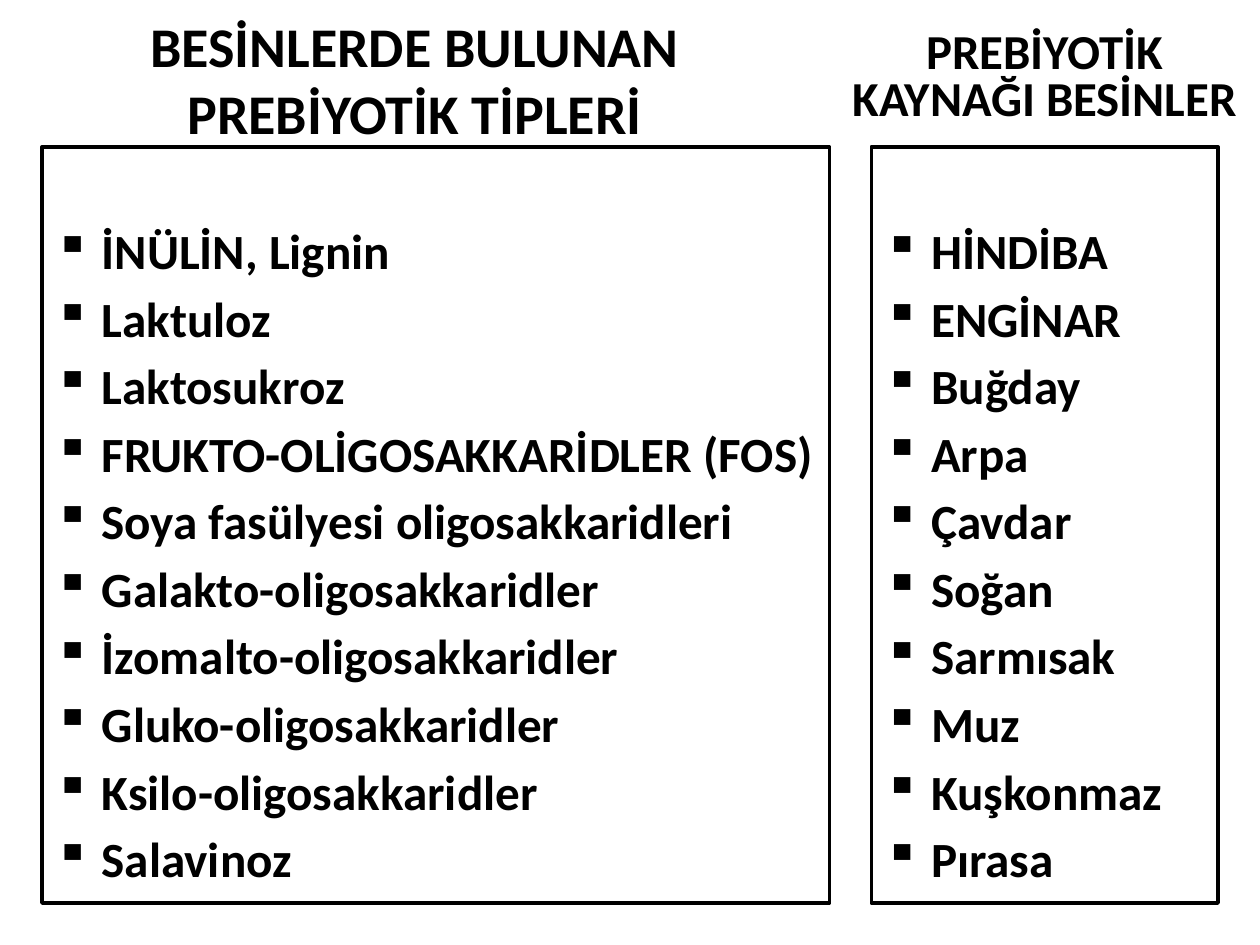
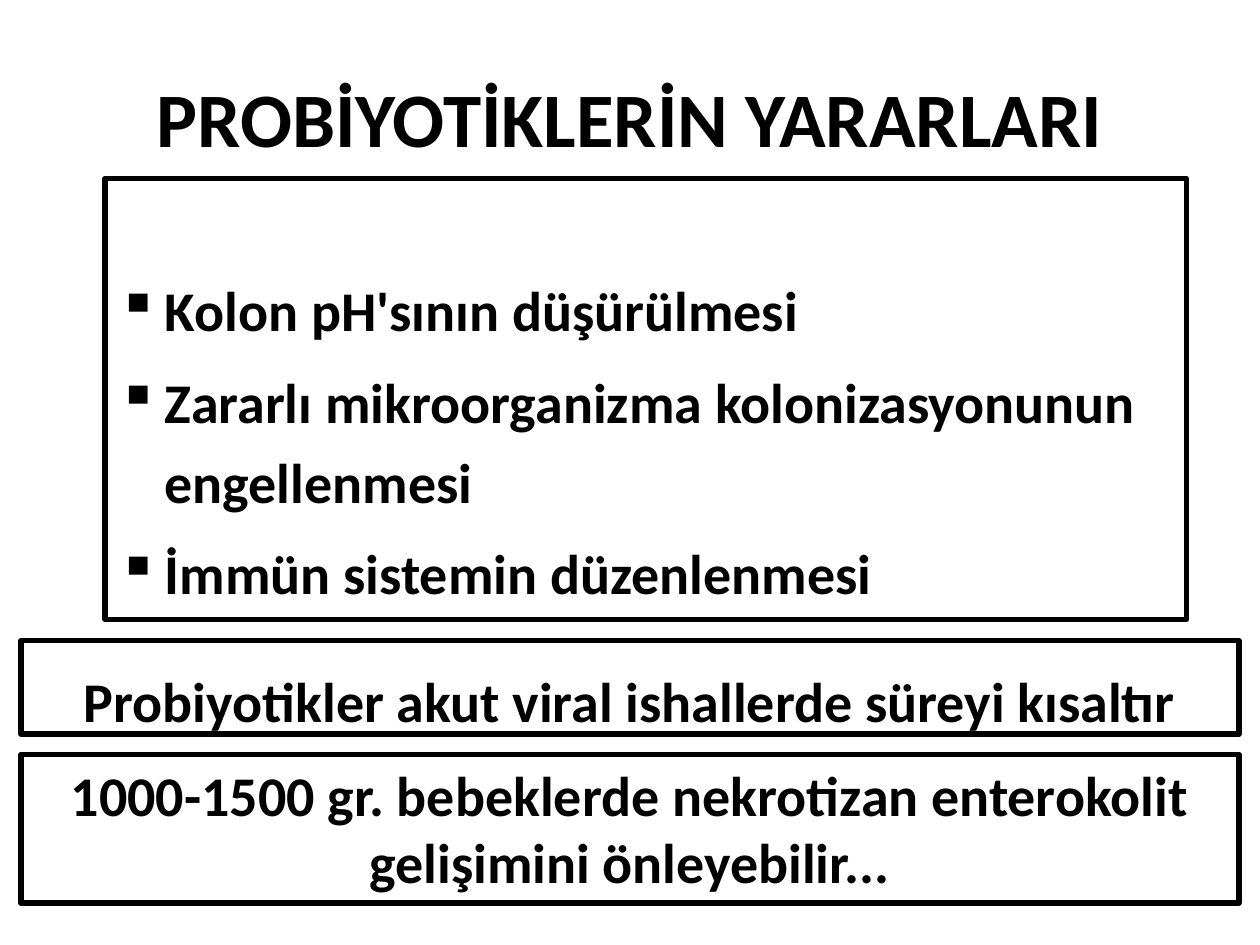
from dataclasses import dataclass

from lxml import etree
from pptx import Presentation
from pptx.dml.color import RGBColor
from pptx.enum.shapes import MSO_SHAPE
from pptx.enum.text import MSO_ANCHOR, PP_ALIGN
from pptx.oxml.ns import qn
from pptx.slide import Slide
from pptx.text.text import TextFrame
from pptx.util import Pt

BLACK = RGBColor(0x00, 0x00, 0x00)
FONT = "Calibri"
RECTANGLE = MSO_SHAPE.RECTANGLE
CENTER, LEFT = PP_ALIGN.CENTER, PP_ALIGN.LEFT
TOP, MIDDLE = MSO_ANCHOR.TOP, MSO_ANCHOR.MIDDLE
INDENT = 27
INSET = 3.6
BLANK_LAYOUT = 6


@dataclass(frozen=True)
class Area:
    left: float
    top: float
    width: float
    height: float

    def lengths(self) -> tuple[Pt, Pt, Pt, Pt]:
        return Pt(self.left), Pt(self.top), Pt(self.width), Pt(self.height)


@dataclass(frozen=True)
class Title:
    text: str
    area: Area
    size: float
    line_spacing: float = 1.0


@dataclass(frozen=True)
class Panel:
    lines: tuple[str, ...]
    area: Area
    size: float = 32
    border: float = 3
    bulleted: bool = False
    line_spacing: float = 1.0
    gap: float = 0
    top_inset: float = INSET


PREBIOTIC_TITLES = (
    Title("BESİNLERDE BULUNAN PREBİYOTİK TİPLERİ", Area(0, 0, 474, 90), 32),
    Title("PREBİYOTİK KAYNAĞI BESİNLER", Area(474, 0, 246, 90), 27.9, 0.8),
)
PREBIOTIC_TYPES = (
    "İNÜLİN, Lignin",
    "Laktuloz",
    "Laktosukroz",
    "FRUKTO-OLİGOSAKKARİDLER (FOS)",
    "Soya fasülyesi oligosakkaridleri",
    "Galakto-oligosakkaridler",
    "İzomalto-oligosakkaridler",
    "Gluko-oligosakkaridler",
    "Ksilo-oligosakkaridler",
    "Salavinoz",
)
PREBIOTIC_FOODS = (
    "HİNDİBA",
    "ENGİNAR",
    "Buğday",
    "Arpa",
    "Çavdar",
    "Soğan",
    "Sarmısak",
    "Muz",
    "Kuşkonmaz",
    "Pırasa",
)
PREBIOTIC_PANELS = tuple(
    Panel(lines, Area(left, 84, width, 432), size=28.1, border=2.25,
          bulleted=True, gap=4.9, top_inset=42)
    for lines, left, width in ((PREBIOTIC_TYPES, 24, 450), (PREBIOTIC_FOODS, 498, 198))
)

BENEFIT_TITLES = (Title("PROBİYOTİKLERİN YARARLARI", Area(36, 21.6, 648, 90), 44),)
BENEFIT_PANELS = (
    Panel(
        (
            "Kolon pH'sının düşürülmesi",
            "Zararlı mikroorganizma kolonizasyonunun engellenmesi",
            "İmmün sistemin düzenlenmesi",
        ),
        Area(60, 102, 618, 252),
        bulleted=True, line_spacing=1.2, gap=6, top_inset=48,
    ),
    Panel(("Probiyotikler akut viral ishallerde süreyi kısaltır",),
          Area(12, 366, 696, 53.5), line_spacing=1.3),
    Panel(("1000-1500 gr. bebeklerde nekrotizan enterokolit gelişimini önleyebilir...",),
          Area(12, 431, 696, 85)),
)


def write_text(frame: TextFrame, lines: tuple[str, ...], *, size: float,
               anchor: MSO_ANCHOR = TOP, bulleted: bool = False,
               line_spacing: float = 1.0, gap: float = 0,
               top_inset: float = INSET) -> None:
    frame.word_wrap = True
    frame.vertical_anchor = anchor
    frame.margin_top = Pt(top_inset)
    for index, line in enumerate(lines):
        para = frame.add_paragraph() if index else frame.paragraphs[0]
        para.alignment = LEFT if bulleted else CENTER
        para.line_spacing = line_spacing
        para.space_before = Pt(gap if index else 0)
        span = para.add_run()
        span.text = line
        span.font.name = FONT
        span.font.size = Pt(size)
        span.font.bold = True
        span.font.color.rgb = BLACK
        if bulleted:
            properties = para._p.get_or_add_pPr()
            properties.set("marL", str(Pt(INDENT)))
            properties.set("indent", str(-Pt(INDENT)))
            etree.SubElement(properties, qn("a:buChar")).set("char", "▪")


def draw_title(page: Slide, title: Title) -> None:
    box = page.shapes.add_textbox(*title.area.lengths())
    write_text(box.text_frame, (title.text,), size=title.size, anchor=MIDDLE,
               line_spacing=title.line_spacing)


def draw_panel(page: Slide, panel: Panel) -> None:
    box = page.shapes.add_shape(RECTANGLE, *panel.area.lengths())
    box.shadow.inherit = False
    box.fill.background()
    box.line.color.rgb = BLACK
    box.line.width = Pt(panel.border)
    write_text(box.text_frame, panel.lines, size=panel.size, bulleted=panel.bulleted,
               line_spacing=panel.line_spacing, gap=panel.gap, top_inset=panel.top_inset)


def main() -> None:
    deck = Presentation()
    deck.slide_width, deck.slide_height = Pt(720), Pt(540)
    for titles, panels in ((PREBIOTIC_TITLES, PREBIOTIC_PANELS),
                           (BENEFIT_TITLES, BENEFIT_PANELS)):
        page = deck.slides.add_slide(deck.slide_layouts[BLANK_LAYOUT])
        for title in titles:
            draw_title(page, title)
        for panel in panels:
            draw_panel(page, panel)
    deck.save("out.pptx")


if __name__ == "__main__":
    main()
